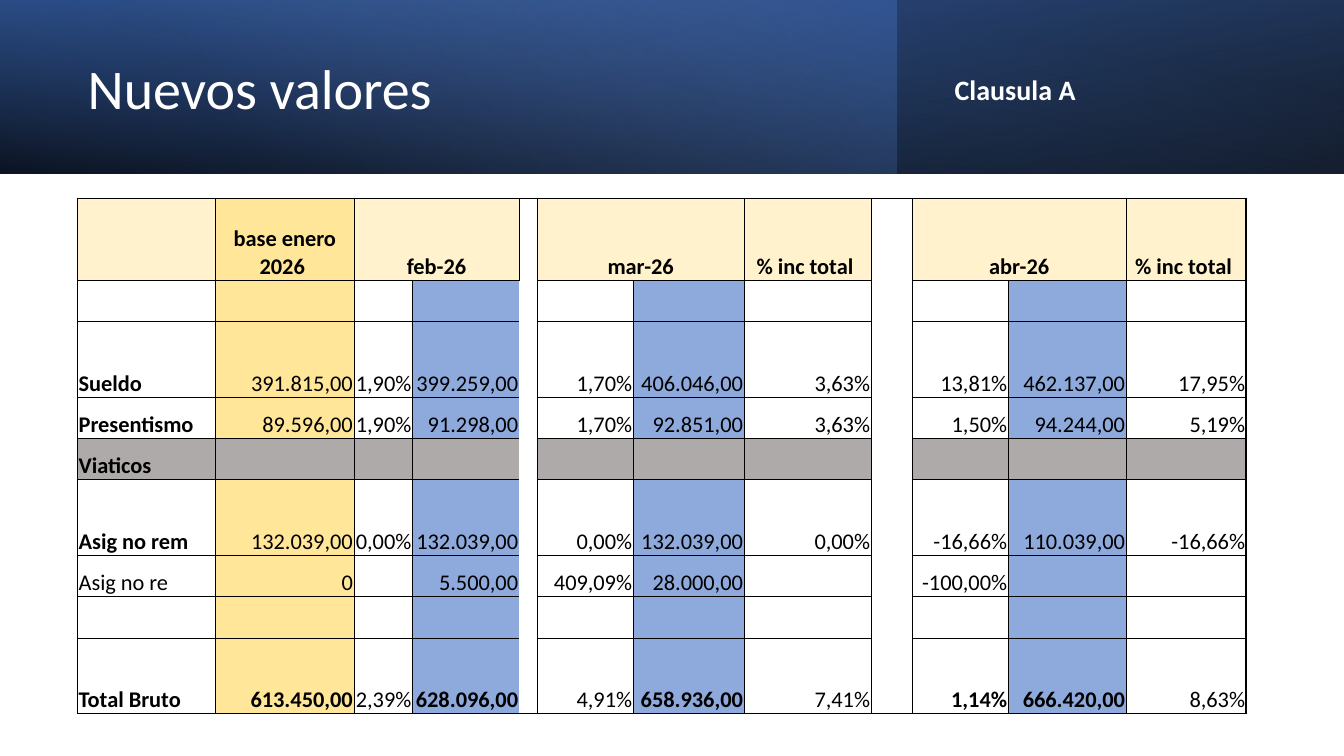
from dataclasses import dataclass

from pptx import Presentation
from pptx.dml.color import RGBColor
from pptx.enum.shapes import MSO_SHAPE
from pptx.enum.text import MSO_ANCHOR, MSO_AUTO_SIZE, PP_ALIGN
from pptx.oxml import parse_xml
from pptx.oxml.ns import nsdecls, qn
from pptx.util import Inches, Pt


@dataclass(frozen=True)
class Theme:
    font: str = "Calibri"
    black: str = "000000"
    white: str = "FFFFFF"
    navy: str = "2F5597"
    blue: str = "4472C4"
    sky: str = "8FAADC"
    cream: str = "FFF2CC"
    gold: str = "FFE699"
    steel: str = "8EA9DB"
    gray: str = "AEAAAA"
    title: int = 40
    clause: int = 20
    body: int = 16
    thin: float = 0.5
    thick: float = 1


@dataclass(frozen=True)
class Band:
    width: float
    angle: int
    stops: tuple  # (position %, colour, opacity %)
    flip: bool = False
    turn: int = 0


@dataclass(frozen=True)
class Line:
    height: float
    label: str = ""
    values: tuple = ("",) * 9
    fill: str = ""
    heavy: tuple = (0,)  # columns in bold


THEME = Theme()
WIDE, HIGH, BAND = 13.33, 7.5, 1.72
BANDS = (
    Band(WIDE, 100, ((0, THEME.black, 96), (100, THEME.navy, 100)), True, 180),
    Band(8.89, 140, ((0, THEME.blue, 41), (74, THEME.sky, 0))),
    Band(WIDE, 260, ((0, THEME.black, 63), (78, THEME.blue, 15)), True),
)
WIDTHS = (1.37, 1.37, 0.58, 1.06, 0.18, 0.95, 1.1, 1.26, 0.41, 0.95, 1.17, 1.19)
GAPS = (4, 8)
SLOTS = [col for col in range(1, len(WIDTHS)) if col not in GAPS]
MERGED = (2, 5, 9)
TINTS = {1: THEME.gold, 3: THEME.steel, 6: THEME.steel, 10: THEME.steel}
LOW, TALL = 0.41, 0.75
LINES = (
    Line(0.81, "", ("base enero 2026 ", "feb-26", "", "mar-26", "", "% inc total ",
                    "abr-26", "", "% inc total "), THEME.cream, tuple(SLOTS)),
    Line(LOW),
    Line(TALL, "Sueldo", ("391.815,00", "1,90%", "399.259,00", "1,70%", "406.046,00",
                          "3,63%", "13,81%", "462.137,00", "17,95%")),
    Line(LOW, "Presentismo", ("89.596,00", "1,90%", "91.298,00", "1,70%", "92.851,00",
                              "3,63%", "1,50%", "94.244,00", "5,19%")),
    Line(LOW, "Viaticos", fill=THEME.gray),
    Line(TALL, "Asig no rem", ("132.039,00", "0,00%", "132.039,00", "0,00%", "132.039,00",
                               "0,00%", "-16,66%", "110.039,00", "-16,66%")),
    Line(LOW, "Asig no re", ("0", "", "5.500,00", "409,09%", "28.000,00", "",
                             "-100,00%", "", ""), heavy=()),
    Line(LOW),
    Line(TALL, "Total Bruto", ("613.450,00", "2,39%", "628.096,00", "4,91%", "658.936,00",
                               "7,41%", "1,14%", "666.420,00", "8,63%"),
         heavy=(0, 1, 3, 6, 9, 10)),
)


def write(frame, text: str, *, size: float, color: str, bold: bool = False,
          align=PP_ALIGN.LEFT, space: float = 1.0) -> None:
    para = frame.paragraphs[0]
    para.alignment = align
    para.line_spacing = space
    run = para.add_run()
    run.text = text
    font = run.font
    font.name, font.size, font.bold = THEME.font, Pt(size), bold
    font.color.rgb = RGBColor.from_string(color)


def draw_band(slide, band: Band) -> None:
    shape = slide.shapes.add_shape(MSO_SHAPE.RECTANGLE, 0, 0, Inches(band.width), Inches(BAND))
    shape.shadow.inherit = False
    shape.line.fill.background()
    shape.fill.background()
    shape.rotation = band.turn
    props = shape.element.spPr
    if band.flip:
        props.find(qn("a:xfrm")).set("flipH", "1")
    stops = "".join(
        f'<a:gs pos="{pos * 1000}"><a:srgbClr val="{color}">'
        f'<a:alpha val="{alpha * 1000}"/></a:srgbClr></a:gs>'
        for pos, color, alpha in band.stops)
    grad = parse_xml(
        f'<a:gradFill {nsdecls("a")} rotWithShape="1"><a:gsLst>{stops}</a:gsLst>'
        f'<a:lin ang="{band.angle * 60000}" scaled="0"/></a:gradFill>')
    props.replace(props.find(qn("a:noFill")), grad)


def edges(row: int, col: int) -> dict[str, float]:
    """Border widths of a cell by side; zero means no line."""
    gap, last = col in GAPS, len(LINES) - 1
    sides = {
        "L": THEME.thick if col == 0 else THEME.thin,
        "R": THEME.thick if col == len(WIDTHS) - 1 else THEME.thin,
        "T": THEME.thick if row == 0 else 0 if gap else THEME.thin,
        "B": THEME.thick if row == last else 0 if gap else THEME.thin,
    }
    if row and col == 3:
        sides["R"] = 0
    if row and col == 4:
        sides["L"] = 0
    return sides


def rule(cell, sides: dict[str, float]) -> None:
    props = cell._tc.get_or_add_tcPr()
    for spot, (side, width) in enumerate(sides.items()):
        paint = (f'<a:solidFill><a:srgbClr val="{THEME.black}"/></a:solidFill>'
                 if width else "<a:noFill/>")
        props.insert(spot, parse_xml(
            f'<a:ln{side} {nsdecls("a")} w="{int(Pt(width))}">{paint}</a:ln{side}>'))


def fill_cell(cell, line: Line, row: int, col: int) -> None:
    cell.margin_left = cell.margin_right = cell.margin_top = Inches(0.01)
    cell.margin_bottom = 0
    cell.vertical_anchor = MSO_ANCHOR.BOTTOM
    tint = "" if col in GAPS else line.fill or TINTS.get(col, "")
    if row == 0 and col == 1:
        tint = THEME.gold
    if tint:
        cell.fill.solid()
        cell.fill.fore_color.rgb = RGBColor.from_string(tint)
    else:
        cell.fill.background()
    if not cell.is_spanned:
        rule(cell, edges(row, col))
    text = {0: line.label, **dict(zip(SLOTS, line.values))}.get(col)
    if text:
        align = PP_ALIGN.CENTER if row == 0 else PP_ALIGN.RIGHT if col else PP_ALIGN.LEFT
        write(cell.text_frame, text, size=THEME.body, color=THEME.black,
              bold=col in line.heavy, align=align)


def draw_table(slide) -> None:
    heights = [line.height for line in LINES]
    frame = slide.shapes.add_table(len(LINES), len(WIDTHS), Inches(0.77), Inches(1.97),
                                   Inches(sum(WIDTHS)), Inches(sum(heights)))
    table = frame.table
    table.first_row = table.horz_banding = False
    style = frame.element.find(".//" + qn("a:tableStyleId"))
    style.text = "{2D5ABB26-0587-4C30-8999-92F81FD0307C}"  # no style, no grid
    for col, width in zip(table.columns, WIDTHS):
        col.width = Inches(width)
    for col in MERGED:
        table.cell(0, col).merge(table.cell(0, col + 1))
    for row, line in enumerate(LINES):
        table.rows[row].height = Inches(line.height)
        for col in range(len(WIDTHS)):
            fill_cell(table.cell(row, col), line, row, col)


def place_title(slide) -> None:
    title = slide.shapes.title
    title.left, title.top = Inches(0.77), Inches(0.27)
    title.width, title.height = Inches(7.72), Inches(1.27)
    slide.shapes.element.append(title.element)  # bring in front of the bands
    title.text_frame.auto_size = MSO_AUTO_SIZE.NONE
    title.text_frame.vertical_anchor = MSO_ANCHOR.MIDDLE
    write(title.text_frame, "Nuevos valores", size=THEME.title, color=THEME.white, space=0.9)


def place_clause(slide) -> None:
    box = slide.shapes.add_textbox(Inches(9.37), Inches(0.43), Inches(3.54), Inches(0.96))
    box.text_frame.word_wrap = True
    box.text_frame.vertical_anchor = MSO_ANCHOR.MIDDLE
    write(box.text_frame, "Clausula A", size=THEME.clause, color=THEME.white,
          bold=True, space=0.9)


def main() -> None:
    deck = Presentation()
    deck.slide_width, deck.slide_height = Inches(WIDE), Inches(HIGH)
    slide = deck.slides.add_slide(deck.slide_layouts.get_by_name("Title Only"))
    for band in BANDS:
        draw_band(slide, band)
    place_title(slide)
    place_clause(slide)
    draw_table(slide)
    deck.save("out.pptx")


if __name__ == "__main__":
    main()
